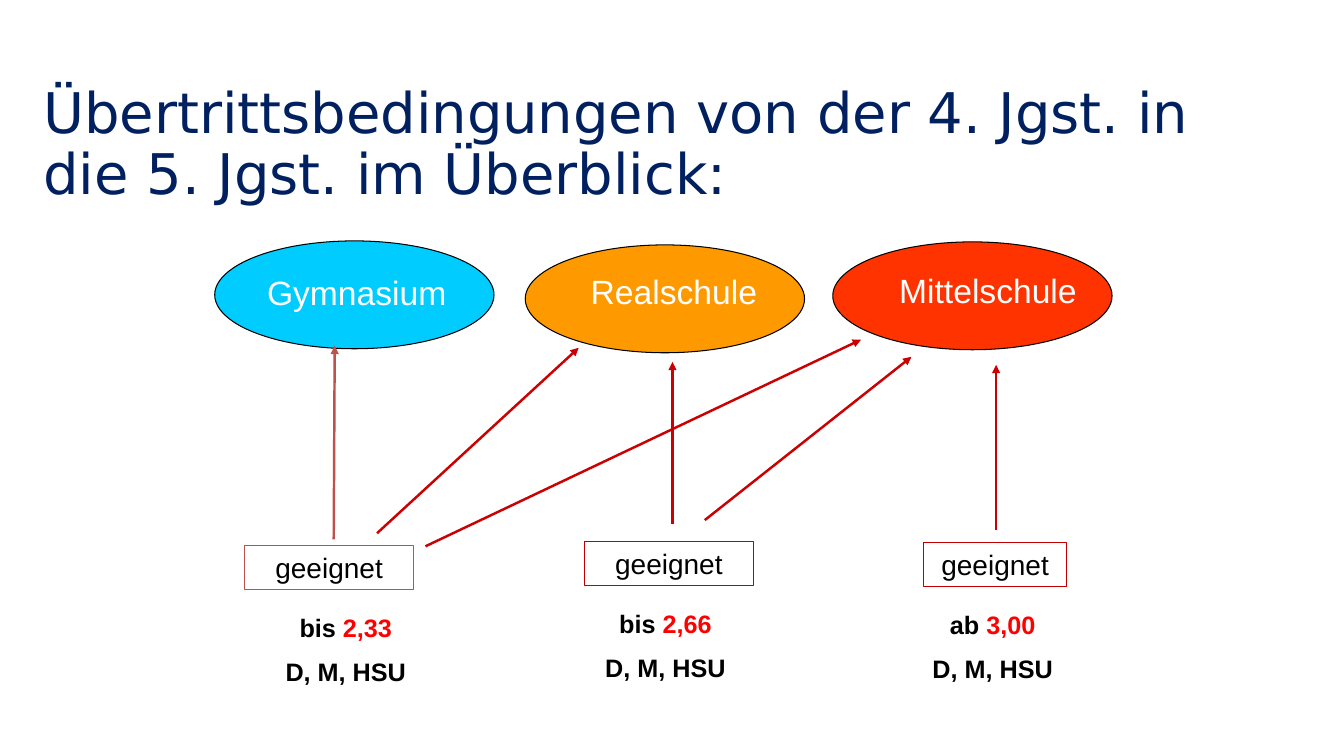
from dataclasses import dataclass

from lxml import etree
from pptx import Presentation
from pptx.dml.color import RGBColor
from pptx.enum.shapes import MSO_CONNECTOR, MSO_SHAPE
from pptx.enum.text import MSO_ANCHOR, MSO_AUTO_SIZE, PP_ALIGN
from pptx.oxml.ns import qn
from pptx.util import Inches, Pt

ELLIPSE, RECT = MSO_SHAPE.OVAL, MSO_SHAPE.RECTANGLE
STRAIGHT = MSO_CONNECTOR.STRAIGHT
LEFT, CENTER = PP_ALIGN.LEFT, PP_ALIGN.CENTER
MIDDLE = MSO_ANCHOR.MIDDLE


@dataclass(frozen=True)
class Theme:
    navy: str = "002060"
    black: str = "000000"
    white: str = "FFFFFF"
    highlight: str = "FF0000"
    gymnasium: str = "00CCFF"
    realschule: str = "FF9900"
    mittelschule: str = "FF3300"
    arrow: str = "CC0000"
    frame: str = "C00000"
    soft_red: str = "C0504D"
    title_font: str = "DejaVu Sans"
    font: str = "Arial"
    title_size: int = 40
    school_size: int = 24
    label_size: int = 20
    grade_size: int = 18


T = Theme()


def rgb(value):
    return RGBColor.from_string(value)


def write_text(sp, paragraphs, size, font=T.font, bold=False, align=CENTER,
               anchor=MIDDLE, gap=0, spacing=None):
    """Fill a shape; each paragraph is a list of (text, colour) runs."""
    tf = sp.text_frame
    tf.word_wrap = True
    tf.auto_size = MSO_AUTO_SIZE.NONE
    tf.vertical_anchor = anchor
    for i, runs in enumerate(paragraphs):
        p = tf.add_paragraph() if i else tf.paragraphs[0]
        p.alignment = align
        p.line_spacing = spacing
        p.space_before = Pt(gap if i else 0)
        for text, color in runs:
            r = p.add_run()
            r.text = text
            r.font.name = font
            r.font.size = Pt(size)
            r.font.bold = bold
            r.font.color.rgb = rgb(color)


prs = Presentation()
prs.slide_width, prs.slide_height = Inches(13.33), Inches(7.5)
slide = prs.slides.add_slide(prs.slide_layouts[5])
shapes = slide.shapes

title = shapes.title
title.left, title.top = Inches(0.33), Inches(0.79)
title.width, title.height = Inches(12.53), Inches(1.31)
write_text(title,
           [[("Übertrittsbedingungen von der 4. Jgst. in die 5. Jgst. im Überblick:", T.navy)]],
           T.title_size, font=T.title_font, align=LEFT, spacing=0.9)

# Schools: name, fill, ellipse left and top, label left and top
schools = [
    ("Gymnasium", T.gymnasium, 2.13, 2.39, 2.55, 2.65),
    ("Realschule", T.realschule, 5.21, 2.43, 5.76, 2.64),
    ("Mittelschule", T.mittelschule, 8.26, 2.4, 8.82, 2.63),
]
for name, fill, x, y, label_x, label_y in schools:
    sp = shapes.add_shape(ELLIPSE, Inches(x), Inches(y), Inches(2.77), Inches(1.07))
    sp.shadow.inherit = False
    sp.fill.solid()
    sp.fill.fore_color.rgb = rgb(fill)
    sp.line.color.rgb = rgb(T.black)
    sp.line.width = Pt(0.75)
    label = shapes.add_textbox(Inches(label_x), Inches(label_y), Inches(2.05), Inches(0.5))
    write_text(label, [[(name, T.white)]], T.school_size, align=LEFT)

# Conditions: limit word, grade, box left, top and width, frame colour, text left and width
conditions = [
    ("bis ", "2,33", 2.43, 5.41, 1.67, T.soft_red, 2.43, 2),
    ("bis ", "2,66", 5.8, 5.37, 1.67, T.frame, 5.6, 2),
    ("ab ", "3,00", 9.16, 5.38, 1.42, T.frame, 8.97, 1.75),
]
for limit, grade, x, y, width, frame, text_x, text_width in conditions:
    sp = shapes.add_shape(RECT, Inches(x), Inches(y), Inches(width), Inches(0.44))
    sp.shadow.inherit = False
    sp.fill.background()
    sp.line.color.rgb = rgb(frame)
    sp.line.width = Pt(0.75)
    write_text(sp, [[("geeignet", T.black)]], T.label_size)
    grades = shapes.add_textbox(Inches(text_x), Inches(y + 0.6), Inches(text_width), Inches(0.86))
    write_text(grades, [[(limit, T.black), (grade, T.highlight)], [("D, M, HSU", T.black)]],
               T.grade_size, bold=True, gap=10)

# Arrows: start x and y, end x and y, colour
arrows = [
    (3.31, 5.35, 3.32, 3.43, T.soft_red),
    (3.74, 5.29, 5.74, 3.45, T.arrow),
    (4.22, 5.42, 8.54, 3.37, T.arrow),
    (6.67, 5.2, 6.67, 3.59, T.arrow),
    (6.99, 5.16, 9.04, 3.54, T.arrow),
    (9.88, 5.26, 9.88, 3.62, T.arrow),
]
for x1, y1, x2, y2, color in arrows:
    arrow = shapes.add_connector(STRAIGHT, Inches(x1), Inches(y1), Inches(x2), Inches(y2))
    arrow.line.color.rgb = rgb(color)
    arrow.line.width = Pt(1.75)
    etree.SubElement(arrow.line._get_or_add_ln(), qn("a:tailEnd"), type="triangle")
    etree.SubElement(arrow._element.spPr, qn("a:effectLst"))

prs.save("out.pptx")
